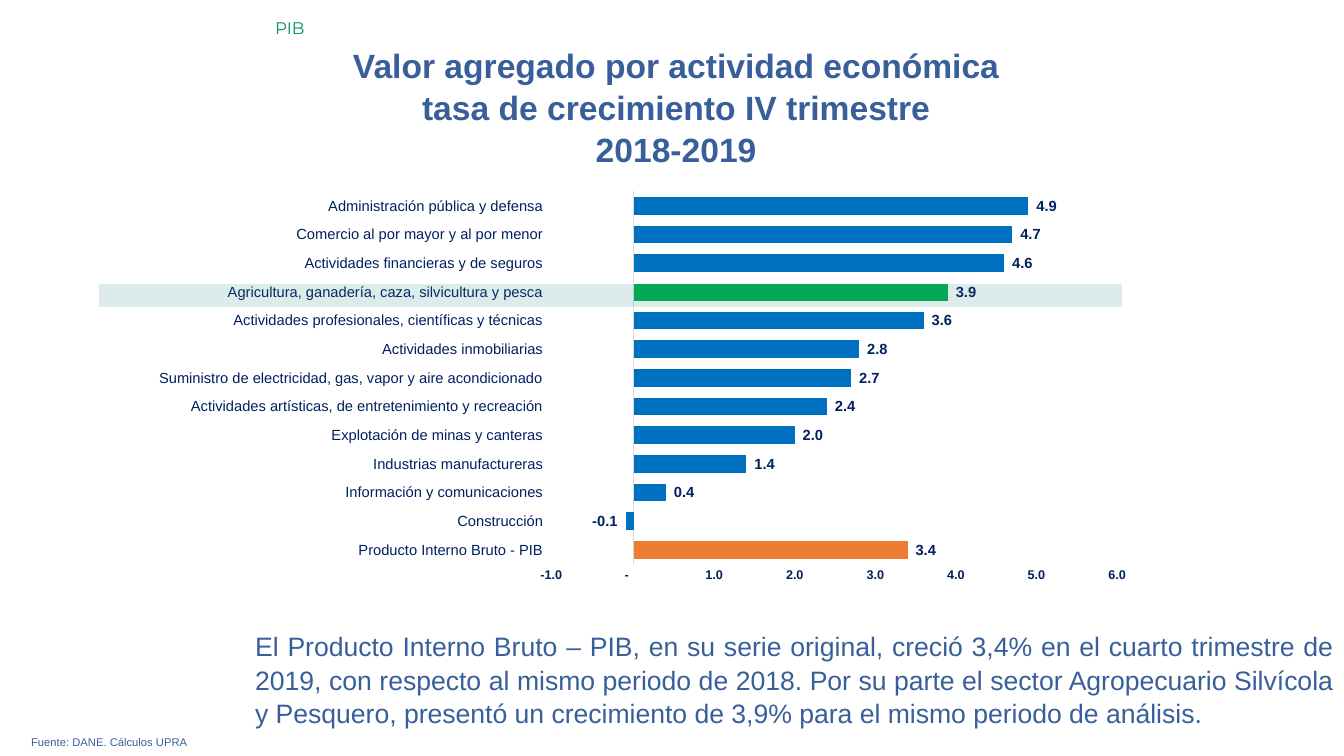
from lxml import etree
from pptx import Presentation
from pptx.chart.data import CategoryChartData
from pptx.dml.color import RGBColor
from pptx.enum.chart import (XL_CHART_TYPE, XL_LABEL_POSITION, XL_TICK_LABEL_POSITION,
                             XL_TICK_MARK)
from pptx.enum.shapes import MSO_SHAPE
from pptx.enum.text import MSO_ANCHOR, MSO_AUTO_SIZE, PP_ALIGN
from pptx.oxml import parse_xml
from pptx.oxml.ns import nsdecls, qn
from pptx.util import Inches, Pt

BAR_CLUSTERED = XL_CHART_TYPE.BAR_CLUSTERED
OUTSIDE_END = XL_LABEL_POSITION.OUTSIDE_END
LABELS_LOW = XL_TICK_LABEL_POSITION.LOW
NO_TICK = XL_TICK_MARK.NONE
RECTANGLE = MSO_SHAPE.RECTANGLE
TOP = MSO_ANCHOR.TOP
GROW = MSO_AUTO_SIZE.SHAPE_TO_FIT_TEXT
LEFT, CENTER, JUSTIFY = PP_ALIGN.LEFT, PP_ALIGN.CENTER, PP_ALIGN.JUSTIFY

WIDTH, HEIGHT = Inches(13.33), Inches(7.5)
COLORS = {
    "text": "395F9B", "section": "009267", "navy": "002060", "black": "000000",
    "bar": "0070C0", "farming": "00B050", "total": "ED7D31",
    "axis": "D9D9D9", "band": "117A76", "white": "FFFFFF",
}
NUMBER_FORMAT = '_-* #,##0.0_-;\\-* #,##0.0_-;_-* "-"??_-;'

TITLE = ["Valor agregado por actividad económica", "tasa de crecimiento IV trimestre",
         "2018-2019"]
SUMMARY = ("El Producto Interno Bruto – PIB, en su serie original, creció 3,4% en el cuarto "
           "trimestre de 2019, con respecto al mismo periodo de 2018. Por su parte el sector "
           "Agropecuario Silvícola y Pesquero, presentó un crecimiento de 3,9% para el "
           "mismo periodo de análisis.")
TOTAL = "Producto Interno Bruto - PIB"
FARMING = "Agricultura, ganadería, caza, silvicultura y pesca"
GROWTH = {
    TOTAL: 3.4,
    "Construcción": -0.1,
    "Información y comunicaciones": 0.4,
    "Industrias manufactureras": 1.4,
    "Explotación de minas y canteras": 2.0,
    "Actividades artísticas, de entretenimiento y recreación": 2.4,
    "Suministro de electricidad, gas, vapor y aire acondicionado": 2.7,
    "Actividades inmobiliarias": 2.8,
    "Actividades profesionales, científicas y técnicas": 3.6,
    FARMING: 3.9,
    "Actividades financieras y de seguros": 4.6,
    "Comercio al por mayor y al por menor": 4.7,
    "Administración pública y defensa": 4.9,
}


def color(name):
    return RGBColor.from_string(COLORS[name])


def area(left, top, width, height):
    """Turn percentages of the slide into lengths."""
    return (int(WIDTH * left / 100), int(HEIGHT * top / 100),
            int(WIDTH * width / 100), int(HEIGHT * height / 100))


def style_font(font, size, color_name, bold=False, name="Arial"):
    font.size, font.bold, font.name = Pt(size), bold, name
    font.color.rgb = color(color_name)


def place(box, position):
    box.left, box.top, box.width, box.height = position


def write(box, lines, size, align, color_name="text", bold=False, name="Arial", spacing=1.0):
    frame = box.text_frame
    frame.word_wrap, frame.auto_size, frame.vertical_anchor = True, GROW, TOP
    for index, line in enumerate(lines):
        para = frame.add_paragraph() if index else frame.paragraphs[0]
        properties = para._p.get_or_add_pPr()
        properties.set("marL", "0")
        properties.set("indent", "0")
        etree.SubElement(properties, qn("a:buNone"))
        para.alignment, para.line_spacing = align, spacing
        para.space_before = Pt(0)
        span = para.add_run()
        span.text = line
        style_font(span.font, size, color_name, bold, name)


def set_plot_area(chart, **shares):
    """Fix the inner plot area as shares of the chart."""
    values = "".join(f'<c:{key} val="{value}"/>' for key, value in shares.items())
    layout = parse_xml(
        f'<c:layout {nsdecls("c")}><c:manualLayout><c:layoutTarget val="inner"/>'
        f'<c:xMode val="edge"/><c:yMode val="edge"/>{values}</c:manualLayout></c:layout>')
    plot_area = chart._chartSpace.chart.plotArea
    for old in plot_area.findall(qn("c:layout")):
        plot_area.remove(old)
    plot_area.insert(0, layout)


def add_growth_chart(page, position):
    data = CategoryChartData()
    data.categories = list(GROWTH)
    data.add_series("Series 1", list(GROWTH.values()))
    chart = page.shapes.add_chart(BAR_CLUSTERED, *position, data).chart
    chart.has_legend = chart.has_title = False
    style_font(chart.font, 10, "black")
    set_plot_area(chart, x=0.41, y=0.02, w=0.56, h=0.92)

    # Axes
    names, scale = chart.category_axis, chart.value_axis
    for axis in (names, scale):
        axis.major_tick_mark = axis.minor_tick_mark = NO_TICK
        axis.has_major_gridlines = False
    names.tick_label_position = LABELS_LOW
    names.format.line.color.rgb = color("axis")
    names.format.line.width = Pt(0.75)
    style_font(names.tick_labels.font, 10.5, "navy")
    scale.minimum_scale, scale.maximum_scale, scale.major_unit = -1, 6, 1
    scale.format.line.fill.background()
    style_font(scale.tick_labels.font, 9, "navy", bold=True)

    # Bars
    plot = chart.plots[0]
    plot.gap_width, plot.overlap, plot.vary_by_categories = 61, 65, False
    series = plot.series[0]
    series.invert_if_negative = False
    series.format.fill.solid()
    series.format.fill.fore_color.rgb = color("bar")
    for category, color_name in ((TOTAL, "total"), (FARMING, "farming")):
        fill = series.points[list(GROWTH).index(category)].format.fill
        fill.solid()
        fill.fore_color.rgb = color(color_name)

    # Value labels
    labels = series.data_labels
    labels.show_value, labels.position = True, OUTSIDE_END
    style_font(labels.font, 10.5, "navy", bold=True)
    for numbers in (labels, scale.tick_labels):
        numbers.number_format, numbers.number_format_is_linked = NUMBER_FORMAT, False


def add_band(page, position, opacity):
    band = page.shapes.add_shape(RECTANGLE, *position)
    band.shadow.inherit = False
    band.fill.solid()
    band.fill.fore_color.rgb = color("band")
    tint = band.fill._xPr.find(qn("a:solidFill"))[0]
    etree.SubElement(tint, qn("a:alpha")).set("val", str(opacity * 1000))
    band.line.color.rgb = color("white")
    band.line.width = Pt(1)


def main():
    deck = Presentation()
    deck.slide_width, deck.slide_height = WIDTH, HEIGHT
    page = deck.slides.add_slide(deck.slide_layouts[1])

    # Title and summary
    title, summary = page.shapes.title, page.placeholders[1]
    place(title, area(3.38, 5.07, 93.85, 17.47))
    write(title, TITLE, 24, CENTER, bold=True, spacing=1.04)
    place(summary, area(18.23, 82.53, 81.77, 14.13))
    write(summary, [SUMMARY], 19, JUSTIFY, spacing=1.04)

    # Source and section name
    source = page.shapes.add_textbox(*area(1.58, 96.67, 96.85, 3.2))
    write(source, ["Fuente: DANE. Cálculos UPRA"], 8, JUSTIFY)
    section = page.shapes.add_textbox(*area(19.73, 1.73, 80.27, 4))
    write(section, ["PIB"], 12, LEFT, "section", name="Montserrat")

    # Chart with the farming row highlighted
    add_growth_chart(page, area(10.43, 24.27, 74.94, 53.6))
    add_band(page, area(7.35, 37.47, 76.22, 3.2), opacity=14)

    deck.save("out.pptx")


if __name__ == "__main__":
    main()
